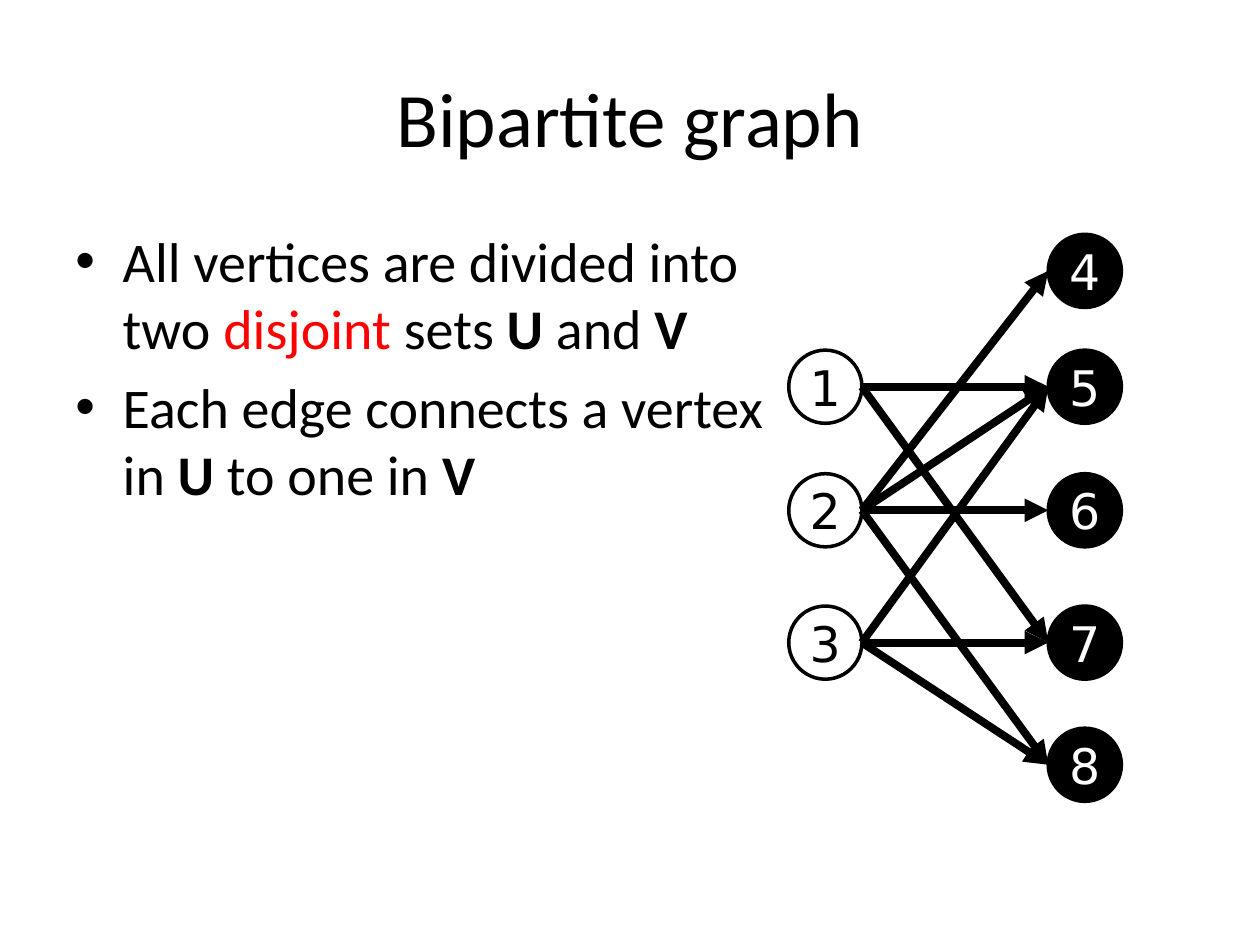
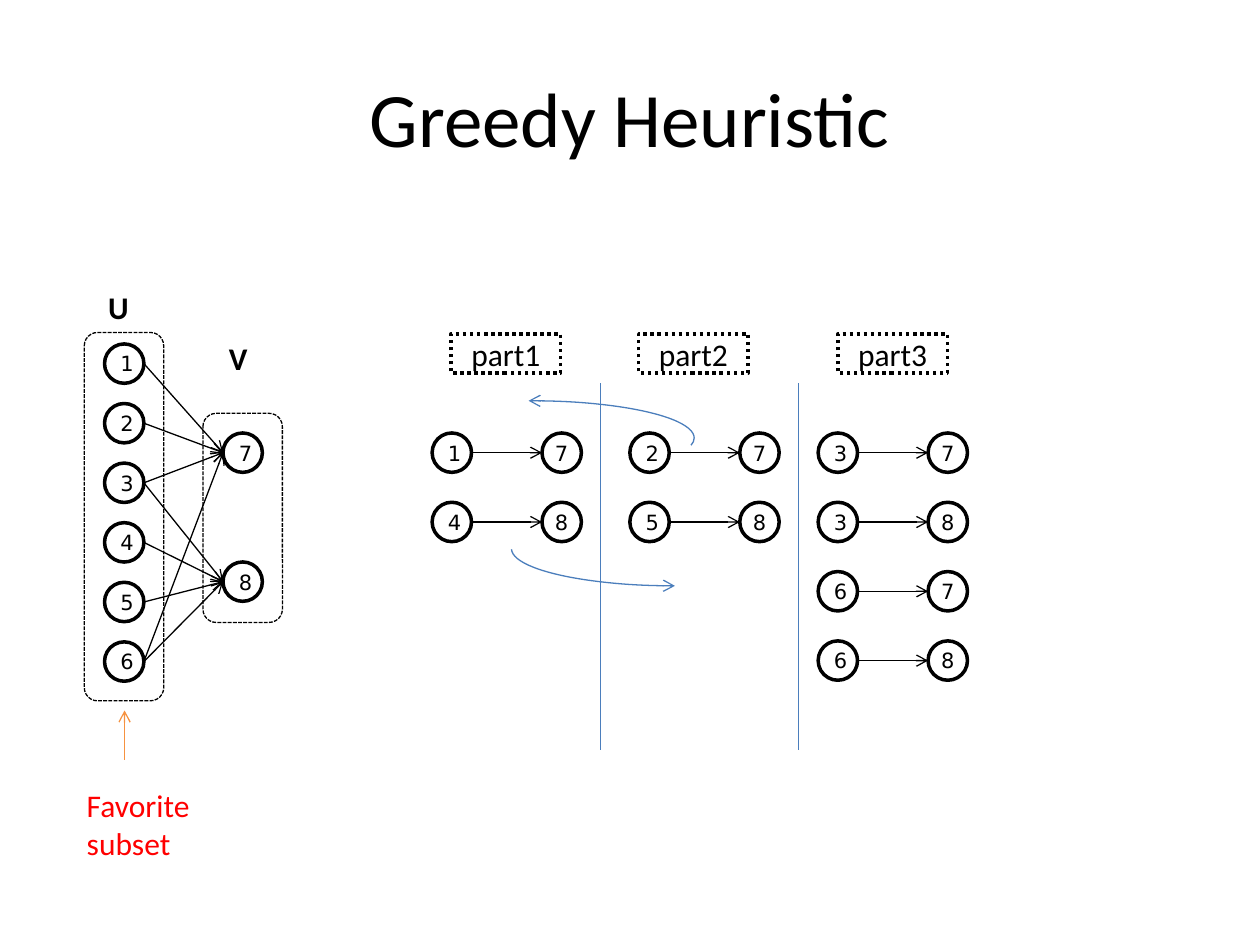
from dataclasses import dataclass
from itertools import product

from lxml import etree
from pptx import Presentation
from pptx.dml.color import RGBColor
from pptx.enum import dml, shapes, text
from pptx.oxml.ns import qn
from pptx.util import Pt

BLACK, WHITE, RED = "000000", "FFFFFF", "FF0000"
BLUE, ORANGE = "4B7EBC", "F69240"
SANS, MONO = "Calibri", "DejaVu Sans"
KIND = shapes.MSO_SHAPE
DASH = dml.MSO_LINE
MID, TOP = text.MSO_ANCHOR.MIDDLE, text.MSO_ANCHOR.TOP
LEFT, MIDST = text.PP_ALIGN.LEFT, text.PP_ALIGN.CENTER


@dataclass(frozen=True)
class Run:
    words: str
    size: float = 18
    color: str = BLACK
    bold: bool = False
    font: str = SANS


@dataclass(frozen=True)
class Box:
    left: float
    top: float
    wide: float
    high: float


@dataclass(frozen=True)
class Node:
    """A labelled circle placed by its centre."""
    label: str
    x: float
    y: float
    size: float = 22.5
    font: float = 12
    fill: str = WHITE
    ink: str = BLACK
    pad: float = 5.76

    @property
    def box(self) -> Box:
        half = self.size / 2
        return Box(self.x - half, self.y - half, self.size, self.size)


def paint(code: str) -> RGBColor:
    return RGBColor.from_string(code)


def write(frame, paras: list[list[Run]], align=LEFT, anchor=TOP, wrap=True) -> None:
    frame.word_wrap = wrap
    frame.vertical_anchor = anchor
    for i, runs in enumerate(paras):
        para = frame.add_paragraph() if i else frame.paragraphs[0]
        para.alignment = align
        for item in runs:
            run = para.add_run()
            run.text = item.words
            run.font.size = Pt(item.size)
            run.font.name = item.font
            run.font.bold = item.bold
            run.font.color.rgb = paint(item.color)


def add_text(slide, box: Box, paras: list[list[Run]], **style):
    area = slide.shapes.add_textbox(Pt(box.left), Pt(box.top), Pt(box.wide), Pt(box.high))
    write(area.text_frame, paras, **style)
    return area.text_frame


def add_shape(slide, kind, box: Box, fill: str | None = WHITE, color: str = BLACK,
              width: float = 2, dash=None):
    shape = slide.shapes.add_shape(kind, Pt(box.left), Pt(box.top), Pt(box.wide), Pt(box.high))
    shape.shadow.inherit = False
    if fill:
        shape.fill.solid()
        shape.fill.fore_color.rgb = paint(fill)
    else:
        shape.fill.background()
    shape.line.color.rgb = paint(color)
    shape.line.width = Pt(width)
    if dash:
        shape.line.dash_style = dash
    return shape


def add_tip(shape, end: str, kind: str) -> None:
    """Put an arrowhead at headEnd (start) or tailEnd (finish)."""
    line = shape.element.spPr.find(qn("a:ln"))
    etree.SubElement(line, qn(f"a:{end}"), type=kind)


def add_line(slide, start: tuple[float, float], stop: tuple[float, float],
             color: str = BLACK, width: float = 0.75, tip: str | None = "arrow") -> None:
    line = slide.shapes.add_connector(shapes.MSO_CONNECTOR.STRAIGHT,
                                      *(Pt(v) for v in (*start, *stop)))
    line.line.color.rgb = paint(color)
    line.line.width = Pt(width)
    if tip:
        add_tip(line, "tailEnd", tip)
    etree.SubElement(line.element.spPr, qn("a:effectLst"))


def add_node(slide, node: Node) -> None:
    frame = add_shape(slide, KIND.OVAL, node.box, node.fill).text_frame
    frame.margin_left = frame.margin_right = Pt(node.pad)
    frame.margin_top = frame.margin_bottom = 0
    write(frame, [[Run(node.label, node.font, node.ink, font=MONO)]], MIDST, MID)


def add_edge(slide, tail: Node, head: Node, **style) -> None:
    """Join the right side of one node to the left side of another."""
    add_line(slide, (tail.x + tail.size / 2, tail.y), (head.x - head.size / 2, head.y), **style)


def add_graph(slide, nodes: dict[str, Node], edges: str, **style) -> None:
    """Draw nodes, then edges given as pairs of labels such as "15 17"."""
    for node in nodes.values():
        add_node(slide, node)
    for tail, head in edges.split():
        add_edge(slide, nodes[tail], nodes[head], **style)


def add_arc(slide, box: Box, start: float, stop: float) -> None:
    """Draw an arc between two angles in degrees, with its arrow at the start."""
    arc = add_shape(slide, KIND.ARC, box, None, BLUE, 0.75)
    for i, angle in enumerate((start, stop)):
        arc.adjustments[i] = angle * 0.6
    add_tip(arc, "headEnd", "arrow")


def add_page(deck, title: str):
    slide = deck.slides.add_slide(deck.slide_layouts[6])
    add_text(slide, Box(36, 21.6, 648, 90), [[Run(title, 44)]], align=MIDST, anchor=MID)
    return slide


def add_points(slide, box: Box, paras: list[list[Run]]) -> None:
    for para in add_text(slide, box, paras).paragraphs:
        para.space_before = Pt(6.4)
        props = para._p.get_or_add_pPr()
        props.set("marL", str(Pt(27)))
        props.set("indent", str(Pt(-27)))
        etree.SubElement(props, qn("a:buFont"), typeface="Arial")
        etree.SubElement(props, qn("a:buChar"), char="•")


def draw_graph(deck) -> None:
    slide = add_page(deck, "Bipartite graph")
    rows = {"4": 154.8, "5": 221, "6": 291.6, "7": 367.2, "8": 437}
    nodes = {key: Node(key, 619.9, y, 41.8, 28, BLACK, WHITE) for key, y in rows.items()}
    for key, level in zip("123", "567"):
        nodes[key] = Node(key, 471.6, rows[level], 41.8, 28)
    add_graph(slide, nodes, "15 26 37 28 38 25 35 17 24", width=4.5, tip="triangle")
    big_u, big_v = Run("U", 32, bold=True), Run("V", 32, bold=True)
    add_points(slide, Box(36, 126, 409, 356.4), [
        [Run("All vertices are divided into two ", 32), Run("disjoint", 32, RED),
         Run(" sets ", 32), big_u, Run(" and ", 32), big_v],
        [Run("Each edge connects a vertex in ", 32), big_u, Run(" to one in ", 32), big_v],
    ])


def draw_parts(slide) -> None:
    first, step, reach = 258.7, 39.6, 62.8
    parts = [("part1", 257.8, 258.2, "17 48"), ("part2", 365, 371.2, "27 58"),
             ("part3", 478.8, 478.8, "37 38 67 68")]
    for name, left, x, pairs in parts:
        tag = add_shape(slide, KIND.RECTANGLE, Box(left, 190.8, 62.6, 22.4),
                        dash=DASH.ROUND_DOT)
        write(tag.text_frame, [[Run(name)]], MIDST, MID)
        for i, (tail, head) in enumerate(pairs.split()):
            y = first + step * i
            ends = Node(tail, x, y), Node(head, x + reach, y, pad=0)
            for node in ends:
                add_node(slide, node)
            add_edge(slide, *ends)
    for x in (343, 456.2):
        add_line(slide, (x, 218.9), (x, 428.4), BLUE, tip=None)
    add_arc(slide, Box(292.3, 292.3, 187.2, 42.5), 90.57, 179.78)
    add_arc(slide, Box(209.5, 229, 187.2, 42.5), 267.25, 2.6)


def draw_greedy(deck) -> None:
    slide = add_page(deck, "Greedy Heuristic")
    for box in (Box(116, 236.2, 45.4, 119.5), Box(48.2, 190, 45.4, 210.5)):
        add_shape(slide, KIND.ROUNDED_RECTANGLE, box, width=0.75, dash=DASH.SQUARE_DOT)
    nodes = {key: Node(key, 71, 207.8 + 34.05 * i) for i, key in enumerate("123456")}
    nodes |= {key: Node(key, 138.7, y) for key, y in (("7", 258.7), ("8", 332.4))}
    add_graph(slide, nodes, "17 27 37 48 58 68 38 67")
    add_line(slide, (71.2, 434.2), (71.2, 406), ORANGE)
    labels = [(Box(54.7, 161.3, 26, 29), [Run("U", bold=True)]),
              (Box(123.8, 190, 25, 29), [Run("V", bold=True)])]
    for box, runs in labels:
        add_text(slide, box, [runs], wrap=False)
    add_text(slide, Box(42.5, 445.7, 74.2, 51),
             [[Run(word, color=RED)] for word in ("Favorite", "subset")], wrap=False)
    draw_parts(slide)


def main() -> None:
    deck = Presentation()
    deck.slide_width, deck.slide_height = Pt(720), Pt(540)
    draw_graph(deck)
    draw_greedy(deck)
    deck.save("out.pptx")


if __name__ == "__main__":
    main()
